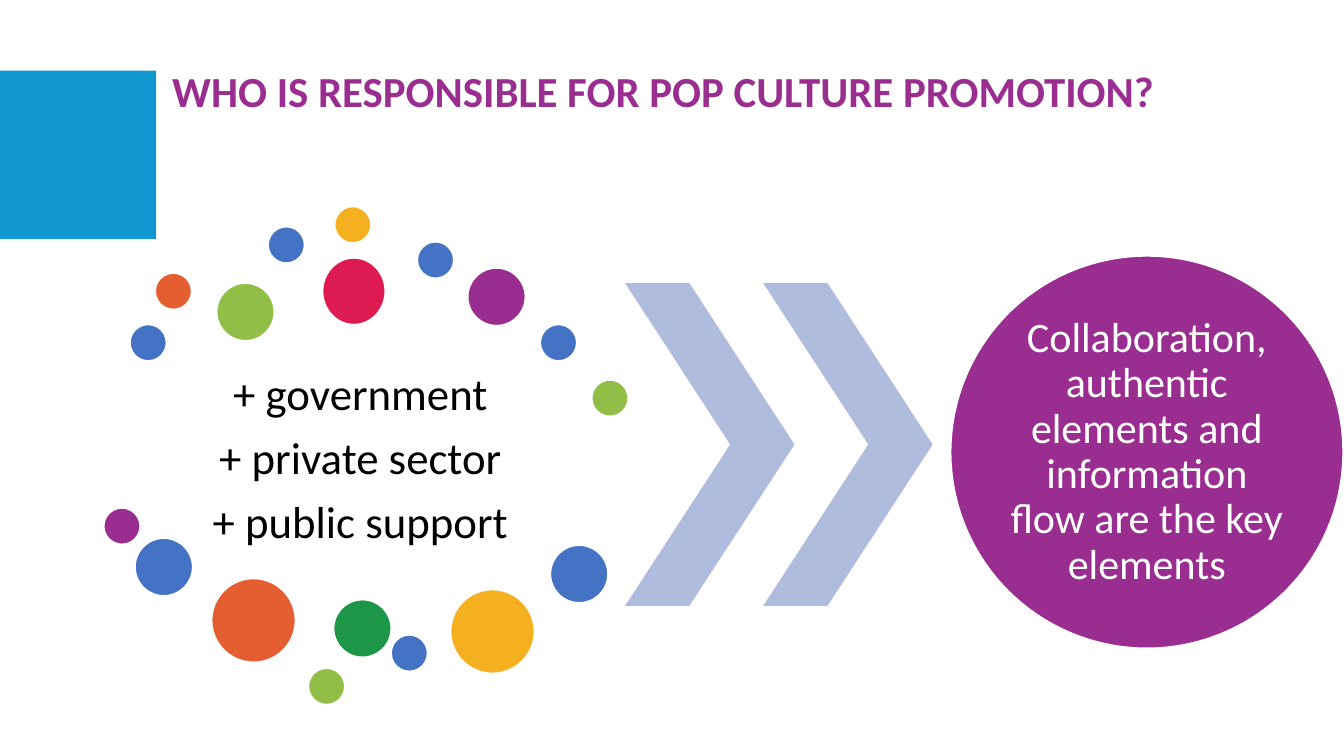
"""Build the slide on who is responsible for pop culture promotion."""
import dataclasses

import pptx
import pptx.dml.color
import pptx.enum.shapes
import pptx.enum.text
import pptx.util

SHAPE = pptx.enum.shapes.MSO_SHAPE
ALIGN = pptx.enum.text.PP_ALIGN
ANCHOR = pptx.enum.text.MSO_ANCHOR


@dataclasses.dataclass(frozen=True)
class Theme:
    """Colours, font and type sizes of the slide."""
    font: str = "Calibri"
    white: str = "FFFFFF"
    black: str = "000000"
    sky: str = "1198D1"
    blue: str = "4472C4"
    orange: str = "E45E32"
    lime: str = "91BE46"
    yellow: str = "F5B020"
    purple: str = "9A2E90"
    red: str = "DD1B50"
    green: str = "1D9647"
    lavender: str = "B0BCDE"
    title_size: float = 30.6
    list_size: float = 32
    result_size: float = 30


class SlideBuilder:
    """Draws themed elements on one slide, with lengths in px."""
    EMU_PER_PX = 9144

    def __init__(self, presentation, theme):
        """Add a blank slide to the presentation."""
        self.theme = theme
        self.slide = presentation.slides.add_slide(presentation.slide_layouts[6])

    def emu(self, *lengths):
        """Turn px lengths into EMU."""
        return [pptx.util.Emu(length * self.EMU_PER_PX) for length in lengths]

    def shape(self, kind, box, fill, outline=None):
        """Draw a filled preset shape."""
        shape = self.slide.shapes.add_shape(kind, *self.emu(*box))
        shape.shadow.inherit = False
        shape.fill.solid()
        shape.fill.fore_color.rgb = pptx.dml.color.RGBColor.from_string(fill)
        if outline:
            shape.line.color.rgb = pptx.dml.color.RGBColor.from_string(outline)
            shape.line.width = pptx.util.Pt(1)
        else:
            shape.line.fill.background()
        return shape

    def ellipse(self, left, top, width, height, fill):
        """Draw an ellipse with a thin white outline."""
        return self.shape(SHAPE.OVAL, (left, top, width, height), fill, self.theme.white)

    def chevron(self, left, top, width, height):
        """Draw a lavender chevron."""
        chevron = self.shape(SHAPE.CHEVRON, (left, top, width, height), self.theme.lavender)
        chevron.adjustments[0] = 0.62

    def text(self, box, lines, size, color, align=ALIGN.CENTER, anchor=ANCHOR.MIDDLE,
             insets=(0, 0), spacing=0.9, after=0, bold=False):
        """Write one paragraph for each line in a text box."""
        frame = self.slide.shapes.add_textbox(*self.emu(*box)).text_frame
        frame.word_wrap = True
        frame.vertical_anchor = anchor
        frame.margin_left, frame.margin_top = self.emu(*insets)
        frame.margin_right, frame.margin_bottom = self.emu(*insets)
        for index, line in enumerate(lines):
            paragraph = frame.add_paragraph() if index else frame.paragraphs[0]
            paragraph.alignment = align
            paragraph.line_spacing = spacing
            paragraph.space_after = pptx.util.Pt(after)
            run = paragraph.add_run()
            run.text = line
            run.font.name = self.theme.font
            run.font.size = pptx.util.Pt(size)
            run.font.bold = bold
            run.font.color.rgb = pptx.dml.color.RGBColor.from_string(color)


def main():
    """Compose and save the slide."""
    presentation = pptx.Presentation()
    presentation.slide_width = pptx.util.Inches(13.33)
    presentation.slide_height = pptx.util.Inches(7.5)
    theme = Theme()
    builder = SlideBuilder(presentation, theme)

    builder.shape(SHAPE.RECTANGLE, (-1, 70, 156, 167), theme.sky)
    builder.text((95, 343, 525, 227),
                 ["+ government", "+ private sector", "+ public support"],
                 theme.list_size, theme.black, insets=(4, 4), after=11)

    small, medium, large = 36, 57, 83
    dots = [
        (129, 322, small, theme.blue),
        (154, 271, small, theme.orange),
        (215, 281, medium, theme.lime),
        (266, 225, small, theme.blue),
        (332, 205, small, theme.yellow),
        (414, 240, small, theme.blue),
        (464, 266, medium, theme.purple),
        (536, 322, small, theme.blue),
        (587, 377, small, theme.lime),
        (103, 504, small, theme.purple),
        (134, 534, medium, theme.blue),
        (210, 574, large, theme.orange),
        (306, 663, small, theme.lime),
        (331, 595, medium, theme.green),
        (388, 630, small, theme.blue),
        (447, 585, large, theme.yellow),
        (546, 541, medium, theme.blue),
    ]
    for left, top, diameter, color in dots:
        builder.ellipse(left, top, diameter, diameter, color)
    builder.ellipse(320, 256, 62, 66, theme.red)

    for left in (620, 757):
        builder.chevron(left, 281, 168, 320)

    builder.ellipse(943, 254, 389, 389, theme.purple)
    builder.text((1000, 311, 275, 275),
                 ["Collaboration, authentic elements and information flow are the key elements"],
                 theme.result_size, theme.white)
    builder.text((161, 69, 1055, 76), ["WHO IS RESPONSIBLE FOR POP CULTURE PROMOTION?"],
                 theme.title_size, theme.purple, align=ALIGN.LEFT, anchor=ANCHOR.TOP,
                 insets=(10, 5), spacing=0.8, bold=True)
    presentation.save("out.pptx")


if __name__ == "__main__":
    main()
